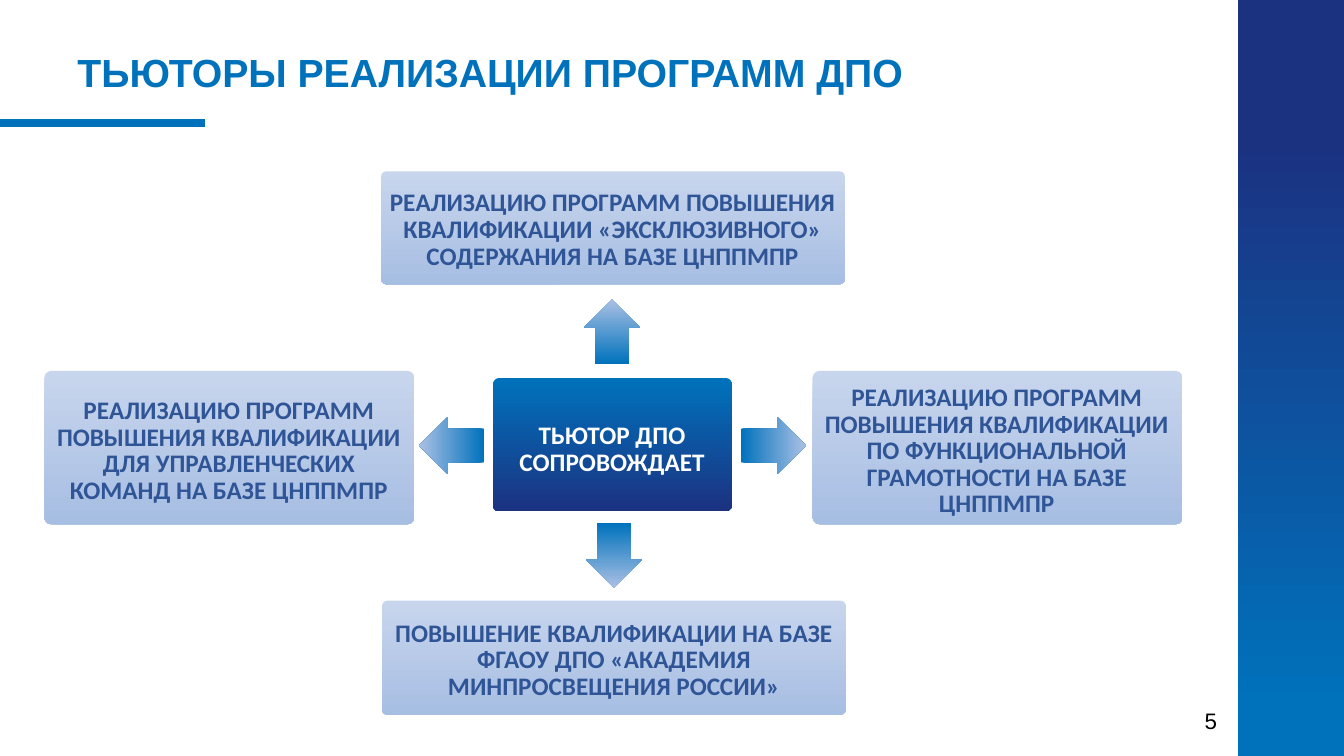
import dataclasses

import lxml.etree
import pptx
import pptx.dml.color
import pptx.enum.shapes
import pptx.enum.text
import pptx.oxml.ns
import pptx.util

Inches = pptx.util.Inches
Pt = pptx.util.Pt
Shape = pptx.enum.shapes.MSO_SHAPE
Anchor = pptx.enum.text.MSO_ANCHOR
Align = pptx.enum.text.PP_ALIGN
qn = pptx.oxml.ns.qn

DOWNWARD = 270


@dataclasses.dataclass(frozen=True)
class Theme:
    blue: str = "0072BC"
    navy: str = "1B3281"
    arrow_tip: str = "AAC0E4"
    card_top: str = "B4C7E7"
    card_bottom: str = "87A6D9"
    card_text: str = "2F5597"
    white: str = "FFFFFF"
    black: str = "000000"
    heading_font: str = "Arial"
    card_font: str = "Calibri"
    title_size: int = 28
    card_size: int = 18
    number_size: int = 16
    card_leading: int = 19
    card_opacity: int = 73


THEME = Theme()

CARDS = [
    ((3.78, 1.7, 4.6, 1.12), (3.18, 1.84, 5.79, 0.9),
     "РЕАЛИЗАЦИЮ ПРОГРАММ ПОВЫШЕНИЯ КВАЛИФИКАЦИИ «ЭКСКЛЮЗИВНОГО» СОДЕРЖАНИЯ НА БАЗЕ ЦНППМПР"),
    ((0.44, 3.68, 3.67, 1.52), (0.42, 3.9, 3.7, 1.17),
     "РЕАЛИЗАЦИЮ ПРОГРАММ ПОВЫШЕНИЯ КВАЛИФИКАЦИИ ДЛЯ УПРАВЛЕНЧЕСКИХ КОМАНД НА БАЗЕ ЦНППМПР"),
    ((8.06, 3.68, 3.67, 1.52), (8.04, 3.77, 3.69, 1.43),
     "РЕАЛИЗАЦИЮ ПРОГРАММ ПОВЫШЕНИЯ КВАЛИФИКАЦИИ ПО ФУНКЦИОНАЛЬНОЙ ГРАМОТНОСТИ НА БАЗЕ ЦНППМПР"),
    ((3.79, 5.96, 4.6, 1.13), (3.52, 6.11, 5.14, 0.9),
     "ПОВЫШЕНИЕ КВАЛИФИКАЦИИ НА БАЗЕ ФГАОУ ДПО «АКАДЕМИЯ МИНПРОСВЕЩЕНИЯ РОССИИ»"),
]

ARROWS = [
    (Shape.LEFT_ARROW, (4.16, 4.14, 0.64, 0.56), 180),
    (Shape.DOWN_ARROW, (5.81, 5.19, 0.56, 0.64), DOWNWARD),
    (Shape.RIGHT_ARROW, (7.35, 4.14, 0.64, 0.56), 0),
    (Shape.UP_ARROW, (5.79, 2.97, 0.56, 0.64), 90),
]


def rgb(value):
    return pptx.dml.color.RGBColor.from_string(value)


def place(area):
    return [Inches(length) for length in area]


def add_gradient_shape(page, kind, area, stops, angle, opacity=100):
    shape = page.shapes.add_shape(kind, *place(area))
    shape.shadow.inherit = False
    shape.line.fill.background()
    shape.fill.gradient()
    shape.fill.gradient_angle = angle
    for stop, (position, color) in zip(shape.fill.gradient_stops, stops):
        stop.position = position
        stop.color.rgb = rgb(color)
    if opacity < 100:
        for color in shape.fill._xPr.iter(qn("a:srgbClr")):
            lxml.etree.SubElement(color, qn("a:alpha"), val=str(opacity * 1000))
    return shape


def add_text(page, area, text, font, size, color, bold=True,
             align=Align.CENTER, anchor=Anchor.MIDDLE):
    box = page.shapes.add_textbox(*place(area))
    frame = box.text_frame
    frame.word_wrap = True
    frame.vertical_anchor = anchor
    para = frame.paragraphs[0]
    para.text = text
    para.alignment = align
    para.font.name = font
    para.font.size = Pt(size)
    para.font.bold = bold
    para.font.color.rgb = rgb(color)
    return box


def add_card(page, area, text_area, text, colors, text_color, opacity=100):
    card = add_gradient_shape(page, Shape.ROUNDED_RECTANGLE, area,
                              list(zip((0, 1), colors)), DOWNWARD, opacity)
    card.adjustments[0] = 0.045
    box = add_text(page, text_area, text, THEME.card_font, THEME.card_size,
                   text_color, anchor=Anchor.TOP)
    box.text_frame.auto_size = pptx.enum.text.MSO_AUTO_SIZE.SHAPE_TO_FIT_TEXT
    box.text_frame.paragraphs[0].line_spacing = Pt(THEME.card_leading)


def add_arrow(page, kind, area, angle):
    arrow = add_gradient_shape(page, kind, area,
                               [(0, THEME.blue), (1, THEME.arrow_tip)], angle)
    arrow.adjustments[0] = 0.6
    arrow.adjustments[1] = 0.5


def add_title_rule(page):
    rule = page.shapes.add_connector(
        pptx.enum.shapes.MSO_CONNECTOR.STRAIGHT, *place((0, 1.22, 2.03, 1.22)))
    rule.line.color.rgb = rgb(THEME.blue)
    rule.line.width = Pt(6)
    lxml.etree.SubElement(rule._element.spPr, qn("a:effectLst"))


def main():
    deck = pptx.Presentation()
    deck.slide_width = Inches(13.33)
    deck.slide_height = Inches(7.5)
    page = deck.slides.add_slide(deck.slide_layouts[6])

    add_text(page, (11.61, 6.94, 0.8, 0.41), "5", THEME.heading_font,
             THEME.number_size, THEME.black, bold=False)
    add_gradient_shape(page, Shape.RECTANGLE, (12.28, 0, 1.05, 7.5),
                       [(0.18, THEME.navy), (0.94, THEME.blue)], DOWNWARD)
    add_title_rule(page)
    add_text(page, (0.67, 0.19, 11.12, 1.05), "ТЬЮТОРЫ РЕАЛИЗАЦИИ ПРОГРАММ ДПО",
             THEME.heading_font, THEME.title_size, THEME.blue, align=Align.LEFT)

    for kind, area, angle in ARROWS:
        add_arrow(page, kind, area, angle)
    for area, text_area, text in CARDS:
        add_card(page, area, text_area, text, (THEME.card_top, THEME.card_bottom),
                 THEME.card_text, THEME.card_opacity)
    add_card(page, (4.89, 3.75, 2.37, 1.32), (4.64, 4.15, 2.86, 0.63),
             "ТЬЮТОР ДПО СОПРОВОЖДАЕТ", (THEME.blue, THEME.navy), THEME.white)

    deck.save("out.pptx")


if __name__ == "__main__":
    main()
